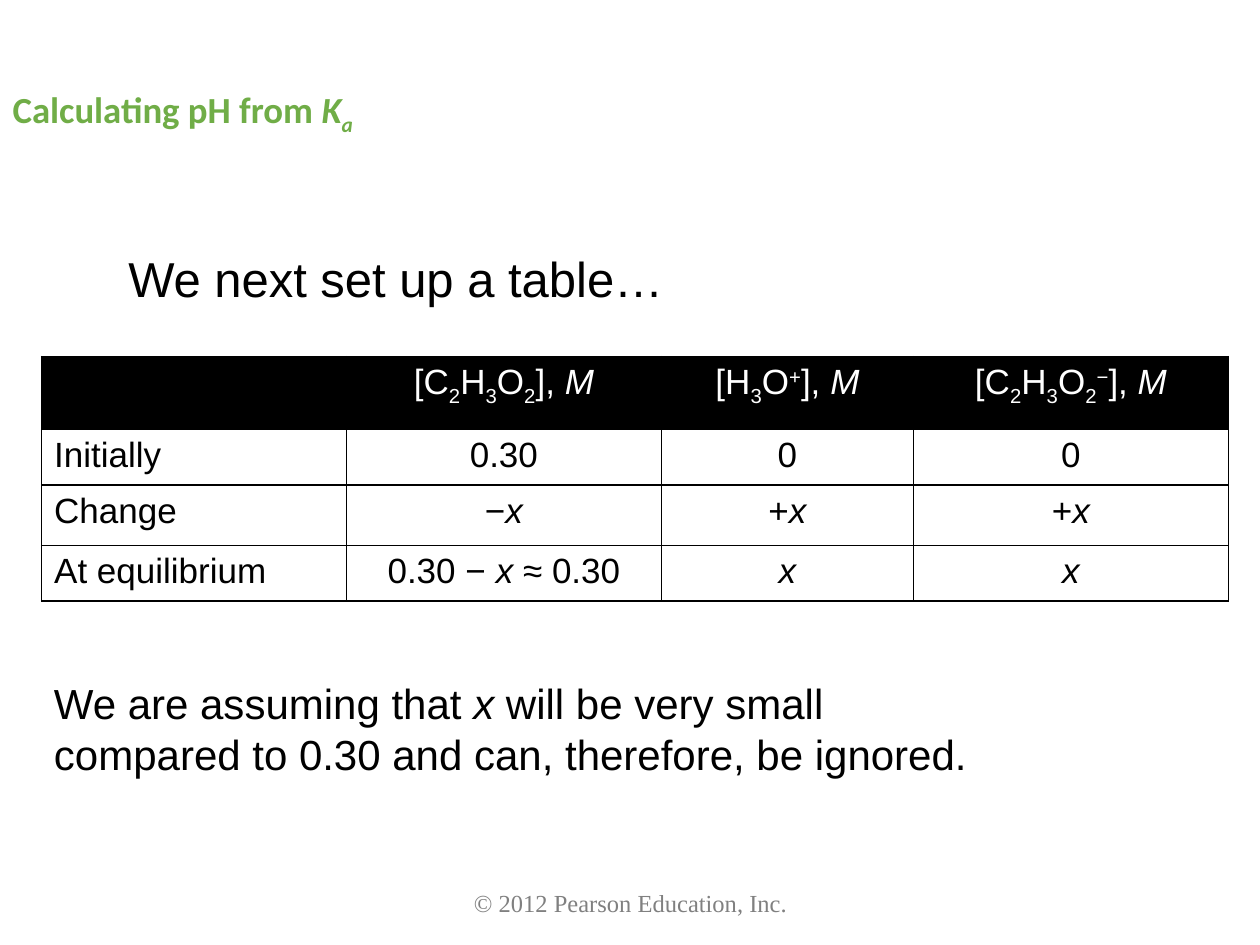
from lxml.etree import SubElement
from pptx import Presentation
from pptx.dml.color import RGBColor
from pptx.enum.text import MSO_ANCHOR, PP_ALIGN
from pptx.oxml.ns import qn
from pptx.util import Inches, Pt

COLORS = {"title": "70AD47", "ink": "000000", "paper": "FFFFFF", "footer": "808080"}
BASELINES = {"_": "-25000", "^": "30000"}


def rgb(name):
    return RGBColor.from_string(COLORS[name])


class Deck:
    """Holds the style and the current slide."""

    def __init__(self, width, height):
        self.prs = Presentation()
        self.prs.slide_width, self.prs.slide_height = Inches(width), Inches(height)
        self.s = self.prs.slides.add_slide(self.prs.slide_layouts[5])

    def add_runs(self, tf, markup, size, color="ink", align=PP_ALIGN.LEFT, name="Arial", bold=False):
        """Parts are split by |; a leading * is italic, _ subscript, ^ superscript."""
        p = tf.paragraphs[0]
        p.alignment = align
        for part in markup.split("|"):
            marks = part[:len(part) - len(part.lstrip("*_^"))]
            r = p.add_run()
            r.text = part[len(marks):]
            style = {"name": name, "size": Pt(size), "bold": bold, "italic": "*" in marks}
            for key, value in style.items():
                setattr(r.font, key, value)
            r.font.color.rgb = rgb(color)
            for mark in marks.replace("*", ""):
                r.font._element.set("baseline", BASELINES[mark])
        return p

    def place(self, sp, box):
        for key, value in zip(("left", "top", "width", "height"), box):
            setattr(sp, key, Inches(value))

    def title(self, box, markup, size):
        sp = self.s.shapes.title
        self.place(sp, box)
        tf = sp.text_frame
        tf.vertical_anchor = MSO_ANCHOR.MIDDLE
        p = self.add_runs(tf, markup, size, "title", name="Calibri", bold=True)
        p.line_spacing = 0.9

    def text(self, box, markup, size, wrap=True, anchor=MSO_ANCHOR.TOP, **style):
        sp = self.s.shapes.add_textbox(*map(Inches, box))
        tf = sp.text_frame
        tf.word_wrap = wrap
        tf.vertical_anchor = anchor
        self.add_runs(tf, markup, size, **style)

    def border(self, cell):
        tcPr = cell._tc.get_or_add_tcPr()
        for i, side in enumerate(("a:lnL", "a:lnR", "a:lnT", "a:lnB")):
            ln = SubElement(tcPr, qn(side), w=str(Pt(1)))
            fill = SubElement(ln, qn("a:solidFill"))
            SubElement(fill, qn("a:srgbClr"), val=COLORS["ink"])
            tcPr.insert(i, ln)  # lines come before the fill

    def table(self, left, top, widths, heights, rows, size):
        box = (left, top, sum(widths), sum(heights))
        tbl = self.s.shapes.add_table(len(rows), len(widths), *map(Inches, box)).table
        for col, width in zip(tbl.columns, widths):
            col.width = Inches(width)
        for i, (row, height) in enumerate(zip(rows, heights)):
            tbl.rows[i].height = Inches(height)
            fill, color = ("ink", "paper") if i == 0 else ("paper", "ink")
            for j, markup in enumerate(row):
                cell = tbl.cell(i, j)
                cell.fill.solid()
                cell.fill.fore_color.rgb = rgb(fill)
                self.border(cell)
                if markup:
                    align = PP_ALIGN.CENTER if j else PP_ALIGN.LEFT
                    self.add_runs(cell.text_frame, markup, size, color, align)


def main():
    deck = Deck(10, 7.5)

    # Title and lead-in
    deck.title((0, 0.25, 10, 1.25), "Calculating pH from |*K|*_a", 21)
    deck.text((0.92, 1.92, 4.46, 0.57), "We next set up a table…", 28, wrap=False)

    # Equilibrium table
    rows = [
        ["", "[C|_2|H|_3|O|_2|], |*M", "[H|_3|O|^+|], |*M", "[C|_2|H|_3|O|_2|^−|], |*M"],
        ["Initially", "0.30", "0", "0"],
        ["Change", "−|*x", "+|*x", "+|*x"],
        ["At equilibrium", "0.30 − |*x |≈ 0.30", "*x", "*x"],
    ]
    deck.table(0.33, 2.83, [2.42, 2.5, 2, 2.5], [0.58, 0.44, 0.48, 0.44], rows, 20)

    # Assumption and copyright line
    deck.text((0.33, 5.33, 7.5, 0.9), "We are assuming that |*x| will be very small "
              "compared to 0.30 and can, therefore, be ignored.", 24)
    deck.text((2.42, 6.83, 5.17, 0.5), "© 2012 Pearson Education, Inc.", 14,
              anchor=MSO_ANCHOR.BOTTOM, color="footer", align=PP_ALIGN.CENTER,
              name="Times New Roman")

    deck.prs.save("out.pptx")


if __name__ == "__main__":
    main()
